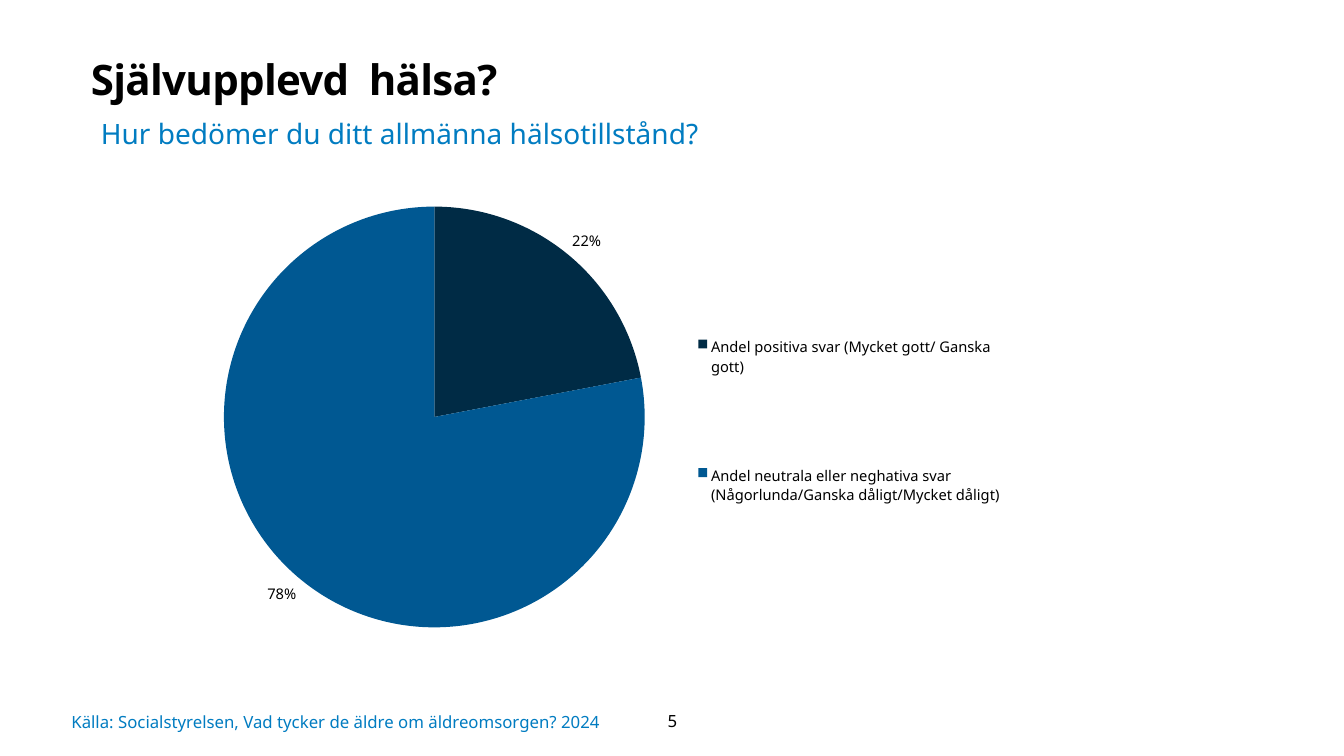
from pptx import Presentation
from pptx.chart.data import CategoryChartData
from pptx.dml.color import RGBColor
from pptx.enum.chart import XL_CHART_TYPE, XL_LABEL_POSITION, XL_LEGEND_POSITION
from pptx.enum.text import MSO_ANCHOR, PP_ALIGN
from pptx.oxml import parse_xml
from pptx.oxml.ns import nsdecls
from pptx.util import Pt

FONT = "Noto Sans"
BLACK = "000000"
BLUE = "017CC1"
ANSWERS = [
    ("Andel positiva svar (Mycket gott/ Ganska gott)", 22, "002B45"),
    ("Andel neutrala eller neghativa svar (Någorlunda/Ganska dåligt/Mycket dåligt)", 78, "005892"),
]


def color(value):
    return RGBColor.from_string(value)


def style_font(font, size, value=BLACK, bold=False):
    font.name = FONT
    font.size = Pt(size)
    font.bold = bold
    font.color.rgb = color(value)


def add_text(slide, box, text, size, value=BLACK, bold=False, align=PP_ALIGN.LEFT,
             anchor=MSO_ANCHOR.TOP, insets=(7.2, 3.6, 7.2, 3.6)):
    """Add one paragraph; insets run left, top, right, bottom."""
    frame = slide.shapes.add_textbox(*map(Pt, box)).text_frame
    frame.word_wrap = True
    frame.vertical_anchor = anchor
    frame.margin_left, frame.margin_top, frame.margin_right, frame.margin_bottom = map(Pt, insets)
    frame.text = text
    paragraph = frame.paragraphs[0]
    paragraph.alignment = align
    style_font(paragraph.runs[0].font, size, value, bold)
    return paragraph


def set_layout(element, left, top, width, height, target=""):
    """Place a chart part by fractions of the chart area."""
    for old in element.findall("{*}layout"):
        element.remove(old)
    layout = parse_xml(
        f'<c:layout {nsdecls("c")}><c:manualLayout>{target}'
        '<c:xMode val="edge"/><c:yMode val="edge"/>'
        f'<c:x val="{left}"/><c:y val="{top}"/><c:w val="{width}"/><c:h val="{height}"/>'
        '</c:manualLayout></c:layout>')
    return layout


def add_health_pie(slide, box):
    data = CategoryChartData(number_format="0")
    data.categories = [answer for answer, _, _ in ANSWERS]
    data.add_series("Series 1", [share for _, share, _ in ANSWERS])
    chart = slide.shapes.add_chart(XL_CHART_TYPE.PIE, *map(Pt, box), data).chart
    style_font(chart.font, 10)
    chart.has_title = False

    plot = chart.plots[0]
    plot.vary_by_categories = True
    for index, (_, _, fill) in enumerate(ANSWERS):
        point = plot.series[0].points[index]
        point.format.fill.solid()
        point.format.fill.fore_color.rgb = color(fill)
        point.format.line.fill.background()
    labels = plot.series[0].data_labels
    labels.show_percentage = True
    labels.show_value = False
    labels.number_format = "0%"
    labels.number_format_is_linked = False
    labels.position = XL_LABEL_POSITION.OUTSIDE_END
    style_font(labels.font, 10.5)

    chart.has_legend = True
    legend = chart.legend
    legend.position = XL_LEGEND_POSITION.RIGHT
    legend.include_in_layout = False
    style_font(legend.font, 10.5)
    legend_element = chart.element.find(".//{*}legend")
    legend_layout = set_layout(legend_element, 0.6, 0.15, 0.35, 0.65)
    legend_element.find("{*}legendPos").addnext(legend_layout)
    plot_area = chart.element.find(".//{*}plotArea")
    plot_area.insert(0, set_layout(plot_area, 0.064, 0.072, 0.479, 0.791,
                                   '<c:layoutTarget val="inner"/>'))


def main():
    presentation = Presentation()
    presentation.slide_width = Pt(960)
    presentation.slide_height = Pt(540)
    slide = presentation.slides.add_slide(presentation.slide_layouts[6])

    title = add_text(slide, (65, 34.5, 708, 44), "Självupplevd  hälsa?", 30,
                     bold=True, insets=(0, 0, 7.2, 3.6))
    title.line_spacing = 1.1
    title.runs[0].font._element.set("spc", "-50")
    add_text(slide, (65, 80, 567, 32), "Hur bedömer du ditt allmänna hälsotillstånd?", 20, BLUE)
    add_health_pie(slide, (119.5, 120.25, 628.5, 380))
    add_text(slide, (443.5, 500.5, 73.5, 29), "5", 12,
             align=PP_ALIGN.CENTER, anchor=MSO_ANCHOR.MIDDLE)
    add_text(slide, (51, 500.5, 392.5, 30),
             "Källa: Socialstyrelsen, Vad tycker de äldre om äldreomsorgen? 2024", 12, BLUE,
             anchor=MSO_ANCHOR.MIDDLE, insets=(0, 0, 0, 0))
    presentation.save("out.pptx")


if __name__ == "__main__":
    main()
